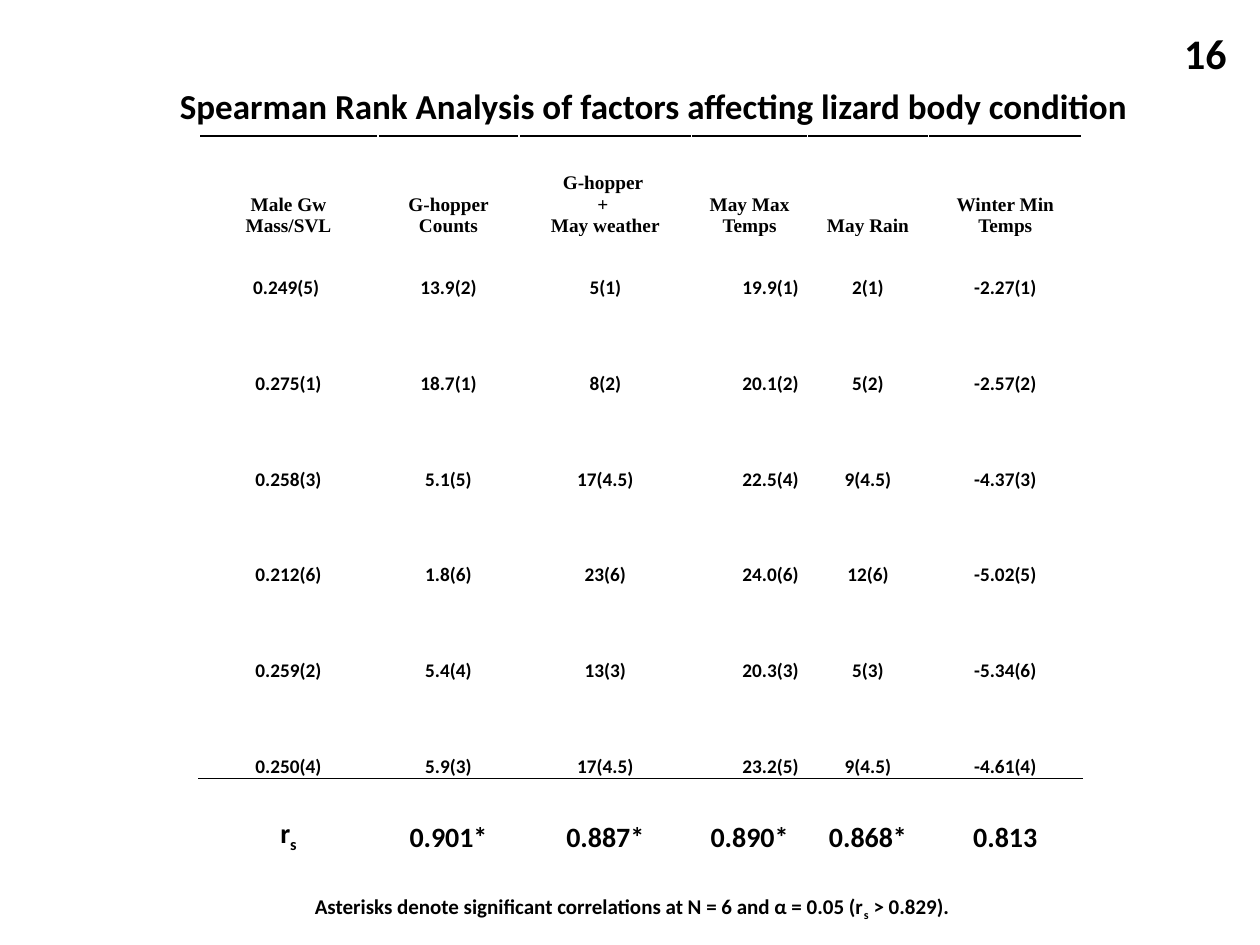
from dataclasses import dataclass

from lxml import etree
from pptx import Presentation
from pptx import util as u
from pptx.dml.color import RGBColor
from pptx.enum import text as t
from pptx.oxml import ns


@dataclass(frozen=True)
class Theme:
    ink: RGBColor = RGBColor(0, 0, 0)
    body_font: str = "Calibri"
    header_font: str = "Times New Roman"
    cell_size: int = 11
    note_size: int = 12
    result_size: int = 16
    title_size: int = 20
    number_size: int = 24
    rule_width: int = 1


theme = Theme()


def write(paragraph, content, size, font=theme.body_font):
    """Fill a paragraph; every second part between underscores is a subscript."""
    for index, part in enumerate(content.split("_")):
        run = paragraph.add_run()
        run.text = part
        if index % 2:
            run._r.get_or_add_rPr().set("baseline", "-25000")
    paragraph.font.name = font
    paragraph.font.size = u.Pt(size)
    paragraph.font.bold = True
    paragraph.font.color.rgb = theme.ink


def add_rule(cell, side):
    """Draw a border along the top (lnT) or bottom (lnB) of a cell."""
    line = etree.Element(ns.qn(f"a:{side}"), w=str(u.Pt(theme.rule_width)))
    fill = etree.SubElement(line, ns.qn("a:solidFill"))
    etree.SubElement(fill, ns.qn("a:srgbClr"), val=str(theme.ink))
    cell._tc.get_or_add_tcPr().insert(0, line)


presentation = Presentation()
presentation.slide_width = u.Inches(10)
presentation.slide_height = u.Inches(7.5)
slide = presentation.slides.add_slide(presentation.slide_layouts[6])

# Table content: headings, six ranked observations, correlation coefficients
rows = [
    ["Male Gw Mass/SVL", "G-hopper Counts", "G-hopper \n+ \nMay weather",
     "May Max Temps", "May Rain", "Winter Min Temps"],
    ["0.249(5) ", "13.9(2)", "5(1)", "19.9(1)", "2(1)", "-2.27(1)"],
    ["0.275(1)", "18.7(1)", "8(2)", "20.1(2)", "5(2)", "-2.57(2)"],
    ["0.258(3)", "5.1(5)", "17(4.5)", "22.5(4)", "9(4.5)", "-4.37(3)"],
    ["0.212(6)", "1.8(6)", "23(6)", "24.0(6)", "12(6)", "-5.02(5)"],
    ["0.259(2)", "5.4(4)", "13(3)", "20.3(3)", "5(3)", "-5.34(6)"],
    ["0.250(4)", "5.9(3)", "17(4.5)", "23.2(5)", "9(4.5)", "-4.61(4)"],
    ["r_s_", "0.901*", "0.887*", "0.890*", "0.868*", "0.813"],
]
column_widths = [1.42, 1.12, 1.37, 0.92, 0.96, 1.22]
row_heights = [0.8, 0.5] + [0.76] * 5 + [0.56]
header_row, first_data_row, result_row = 0, 1, len(rows) - 1
max_temps_column = 3

# Plain table grid
table = slide.shapes.add_table(
    len(rows), len(column_widths), u.Inches(1.58), u.Inches(1.08),
    u.Inches(sum(column_widths)), u.Inches(sum(row_heights))).table
table.first_row = table.horz_banding = False
for column, width in zip(table.columns, column_widths):
    column.width = u.Inches(width)
for row, height in zip(table.rows, row_heights):
    row.height = u.Inches(height)

# Cells
for row_index, values in enumerate(rows):
    is_header = row_index == header_row
    is_result = row_index == result_row
    size = theme.result_size if is_result else theme.cell_size
    font = theme.header_font if is_header else theme.body_font
    for column_index, value in enumerate(values):
        cell = table.cell(row_index, column_index)
        cell.fill.background()
        cell.vertical_anchor = t.MSO_ANCHOR.BOTTOM
        cell.margin_left = cell.margin_right = u.Inches(0.07)
        cell.margin_top = cell.margin_bottom = 0
        is_temperature = column_index == max_temps_column and not is_header
        for line_index, content in enumerate(value.split("\n")):
            frame = cell.text_frame
            paragraph = frame.add_paragraph() if line_index else frame.paragraphs[0]
            write(paragraph, content, size, font)
            paragraph.alignment = (t.PP_ALIGN.RIGHT if is_temperature and not is_result
                                   else t.PP_ALIGN.CENTER)
            if row_index > first_data_row or is_temperature:
                paragraph.line_spacing = 2.0
        if is_header or is_result:
            add_rule(cell, "lnT")
        elif row_index == result_row - 1:
            add_rule(cell, "lnB")

# Footnote, title and slide number
captions = [
    ("Asterisks denote significant correlations at N = 6 and α = 0.05 (r_s_ > 0.829).",
     theme.note_size, (2.4, 7.04, 6.25, 0.3), True),
    ("Spearman Rank Analysis of factors affecting lizard body condition",
     theme.title_size, (1.33, 0.62, 7.8, 0.44), False),
    ("16", theme.number_size, (9.3, 0.17, 0.7, 0.5), True),
]
for content, size, box, wrap in captions:
    frame = slide.shapes.add_textbox(*map(u.Inches, box)).text_frame
    frame.word_wrap = wrap
    frame.auto_size = t.MSO_AUTO_SIZE.SHAPE_TO_FIT_TEXT
    write(frame.paragraphs[0], content, size)

presentation.save("out.pptx")
